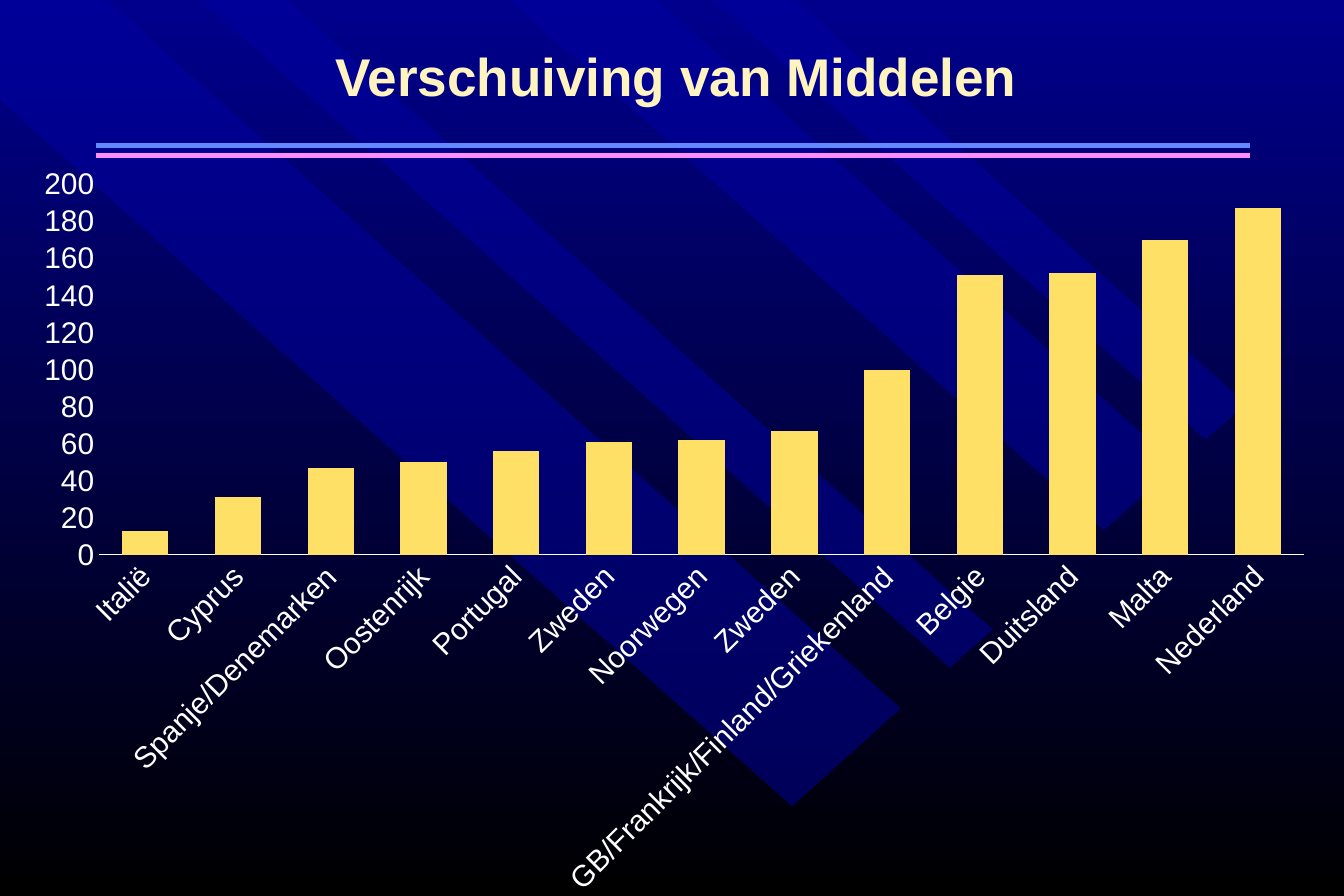
from dataclasses import dataclass

from lxml.etree import SubElement
from pptx import Presentation
from pptx.chart.data import CategoryChartData
from pptx.dml.color import RGBColor
from pptx.enum.chart import XL_CHART_TYPE as ChartType, XL_TICK_MARK as Tick
from pptx.enum.shapes import MSO_CONNECTOR as Connector
from pptx.enum.text import MSO_ANCHOR as Anchor, PP_ALIGN as Align
from pptx.oxml import parse_xml
from pptx.oxml.ns import nsdecls, qn
from pptx.util import Pt

TITLE = "Verschuiving van Middelen"
RESOURCES = [
    ("Italië", 13), ("Cyprus", 31), ("Spanje/Denemarken", 47),
    ("Oostenrijk", 50), ("Portugal", 56), ("Zweden", 61),
    ("Noorwegen", 62), ("Zweden", 67),
    ("GB/Frankrijk/Finland/Griekenland", 100), ("Belgie", 151),
    ("Duitsland", 152), ("Malta", 170), ("Nederland", 187),
]
BANDS = [
    [(542.9, 427), (64.1, 0), (0, 0), (0, 60.5), (477.4, 486)],
    [(172.8, 0), (598.3, 379.4), (572.4, 402.5), (121, 0)],
    [(396, 0), (709.2, 280.1), (665.3, 319.7), (307.4, 0)],
    [(429.8, 0), (726.5, 265), (751, 243.4), (478.8, 0)],
]
SLIDE_SIZE = (810, 540)
TITLE_BOX = (41.8, 11.5, 731.5, 72)
CHART_BOX = (12.2, 92.9, 789.8, 455.8)
PLOT_AREA = {"x": 0.06, "y": 0.04, "w": 0.92, "h": 0.49}
RULE_LEFT, RULE_RIGHT, RULE_TOP, RULE_STEP = 57.6, 753.1, 87.8, 6


def rgb(code):
    return RGBColor.from_string(code)


@dataclass(frozen=True)
class Theme:
    font: str = "Arial"
    back_top: RGBColor = rgb("00008C")
    back_bottom: RGBColor = rgb("000000")
    band: RGBColor = rgb("0000A4")
    title: RGBColor = rgb("FFF3BF")
    text: RGBColor = rgb("FFFFFF")
    bar: RGBColor = rgb("FFE066")
    rules: tuple = (rgb("6388FF"), rgb("FF8DFF"))
    title_size: int = 32
    axis_size: int = 18
    rule_width: int = 3


THEME = Theme()


def points(values):
    return [Pt(v) for v in values]


def paint_background(slide):
    fill = slide.background.fill
    fill.gradient()
    fill.gradient_angle = 270
    for stop, color in zip(fill.gradient_stops, (THEME.back_top, THEME.back_bottom)):
        stop.color.rgb = color
    for stop, position in zip(fill.gradient_stops, (0, 1)):
        stop.position = position


def add_band(slide, outline):
    start, *rest = [points(vertex) for vertex in outline]
    builder = slide.shapes.build_freeform(*start)
    builder.add_line_segments(rest, close=True)
    s = builder.convert_to_shape()
    s.shadow.inherit = False
    s.line.fill.background()
    s.fill.solid()
    s.fill.fore_color.rgb = THEME.band
    color = s.fill._xPr.find(qn("a:solidFill"))[0]
    SubElement(color, qn("a:alpha"), val="50000")


def set_font(font, size, color, bold=False):
    font.name, font.size, font.bold = THEME.font, Pt(size), bold
    font.color.rgb = color


def fix_plot_area(chart):
    """Pin the inner plot area to fractions of the chart frame."""
    modes = "".join(f'<c:{k}Mode val="edge"/>' for k in "xy")
    sizes = "".join(f'<c:{k} val="{v}"/>' for k, v in PLOT_AREA.items())
    layout = parse_xml(
        f'<c:layout {nsdecls("c")}><c:manualLayout><c:layoutTarget val="inner"/>'
        f"{modes}{sizes}</c:manualLayout></c:layout>")
    plot_area = chart._chartSpace.chart.plotArea
    for old in plot_area.findall(qn("c:layout")):
        plot_area.remove(old)
    plot_area.insert(0, layout)


def add_resource_chart(slide):
    data = CategoryChartData()
    data.categories = [country for country, _ in RESOURCES]
    data.add_series("Series 1", [value for _, value in RESOURCES])
    chart = slide.shapes.add_chart(
        ChartType.COLUMN_CLUSTERED, *points(CHART_BOX), data).chart
    chart.has_legend = chart.has_title = False
    set_font(chart.font, THEME.axis_size, THEME.text)
    fix_plot_area(chart)

    plot = chart.plots[0]
    plot.gap_width, plot.overlap, plot.vary_by_categories = 100, -27, False
    fill = plot.series[0].format.fill
    fill.solid()
    fill.fore_color.rgb = THEME.bar

    countries, amounts = chart.category_axis, chart.value_axis
    for axis in (countries, amounts):
        axis.major_tick_mark = axis.minor_tick_mark = Tick.NONE
        axis.has_major_gridlines = False
        set_font(axis.tick_labels.font, THEME.axis_size, THEME.text)
    countries.format.line.color.rgb = THEME.text
    countries.format.line.width = Pt(0.75)
    countries._element.txPr.find(qn("a:bodyPr")).set("rot", "-2700000")
    amounts.format.line.fill.background()
    amounts.minimum_scale, amounts.maximum_scale, amounts.major_unit = 0, 200, 20


def set_title(slide):
    s = slide.shapes.title
    s.left, s.top, s.width, s.height = points(TITLE_BOX)
    tf = s.text_frame
    tf.text = TITLE
    tf.word_wrap, tf.vertical_anchor = True, Anchor.MIDDLE
    p = tf.paragraphs[0]
    p.alignment, p.line_spacing = Align.CENTER, 0.9
    r = p.runs[0]
    set_font(r.font, THEME.title_size, THEME.title, bold=True)
    shadow = parse_xml(
        f'<a:effectLst {nsdecls("a")}><a:outerShdw dist="35921" dir="2700000">'
        '<a:srgbClr val="000000"/></a:outerShdw></a:effectLst>')
    r.font._element.find(qn("a:solidFill")).addnext(shadow)
    slide.shapes._spTree.append(s._element)  # bring in front of the chart


def add_rules(slide):
    for i, color in enumerate(THEME.rules):
        y = RULE_TOP + i * RULE_STEP
        line = slide.shapes.add_connector(
            Connector.STRAIGHT, *points((RULE_LEFT, y, RULE_RIGHT, y)))
        line.line.color.rgb = color
        line.line.width = Pt(THEME.rule_width)
        SubElement(line._element.spPr, qn("a:effectLst"))


def main():
    prs = Presentation()
    prs.slide_width, prs.slide_height = points(SLIDE_SIZE)
    slide = prs.slides.add_slide(prs.slide_layouts[5])
    paint_background(slide)
    for outline in BANDS:
        add_band(slide, outline)
    add_resource_chart(slide)
    set_title(slide)
    add_rules(slide)
    prs.save("out.pptx")


if __name__ == "__main__":
    main()
